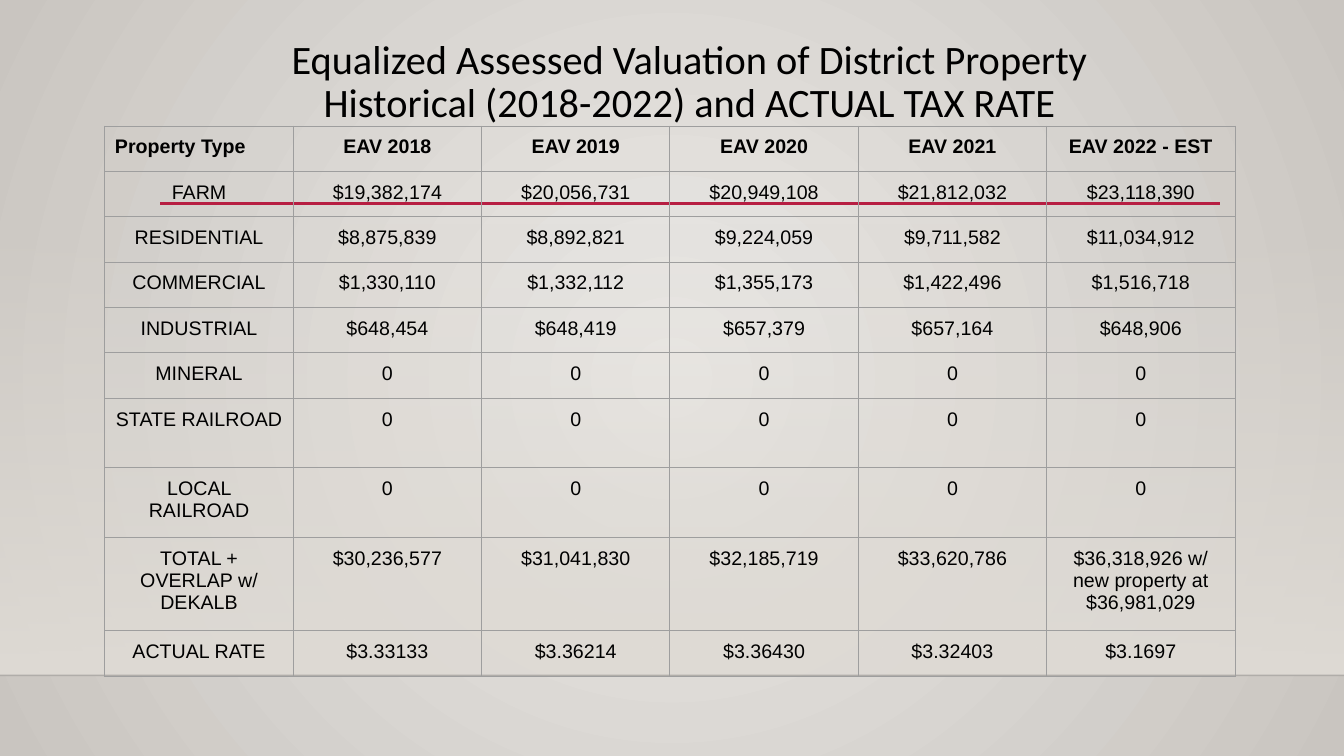
from dataclasses import dataclass

from lxml import etree
from pptx import Presentation
from pptx.dml.color import RGBColor
from pptx.enum import shapes, text
from pptx.oxml import ns
from pptx.util import Inches, Pt


@dataclass(frozen=True)
class Theme:
    ink: str = "000000"
    center: str = "EBE9E6"
    edge: str = "C9C5C0"
    floor: str = "DFDBD5"
    floor_line: str = "000001"
    accent: str = "B71E42"
    grid: str = "9E9E9E"
    title_font: str = "Calibri"
    table_font: str = "Arial"
    title_size: float = 28.8
    table_size: float = 14


theme = Theme()


def add_xml(parent, xml):
    """Append a DrawingML fragment to parent."""
    start = xml.replace(" ", f' {ns.nsdecls("a")} ', 1)
    parent.append(etree.fromstring(start))


def add_rule(s, x1, x2, y, color, width, alpha=100):
    """Draw a horizontal line, alpha being its opacity in percent."""
    rule = s.shapes.add_connector(
        shapes.MSO_CONNECTOR.STRAIGHT, Inches(x1), Inches(y), Inches(x2), Inches(y))
    rule.line.color.rgb = RGBColor.from_string(color)
    rule.line.width = Pt(width)
    if alpha < 100:
        add_xml(rule.line._ln.find(".//" + ns.qn("a:srgbClr")),
                f'<a:alpha val="{alpha * 1000}"/>')
    add_xml(rule._element.spPr, "<a:effectLst />")


prs = Presentation()
prs.slide_width, prs.slide_height = Inches(13.33), Inches(7.5)
s = prs.slides.add_slide(prs.slide_layouts[5])

# Background: light centre fading outwards
fill = s.background.fill
fill.gradient()
for stop, color in zip(fill.gradient_stops, (theme.center, theme.edge)):
    stop.color.rgb = RGBColor.from_string(color)
grad = s.background._cSld.find(".//" + ns.qn("a:gradFill"))
grad.remove(grad.find(ns.qn("a:lin")))
add_xml(grad, '<a:path path="circle">'
              '<a:fillToRect l="50000" t="50000" r="50000" b="50000"/></a:path>')

# Wall that fades in towards the floor line
wall = s.shapes.add_shape(
    shapes.MSO_SHAPE.RECTANGLE, 0, Inches(2.21), Inches(13.33), Inches(4.49))
wall.shadow.inherit = False
wall.line.fill.background()
wall.fill.gradient()
wall.fill.gradient_angle = 270
for stop in wall.fill.gradient_stops:
    stop.color.rgb = RGBColor.from_string(theme.floor)
clear = wall._element.spPr.find(".//" + ns.qn("a:srgbClr"))
add_xml(clear, '<a:alpha val="0"/>')

add_rule(s, 0, 13.33, 6.7, theme.floor_line, 1, alpha=20)
add_rule(s, 1.59, 12.1, 2.02, theme.accent, 2.5)

# Title, in front of the wall
title = s.shapes.title
s.shapes._spTree.append(title._element)
title.left, title.top = Inches(1.59), Inches(0.34)
title.width, title.height = Inches(10.5), Inches(0.91)
tf = title.text_frame
tf.text = ("Equalized Assessed Valuation of District Property\n"
           "Historical (2018-2022) and ACTUAL TAX RATE")
tf.auto_size = text.MSO_AUTO_SIZE.NONE
tf.word_wrap = True
tf.vertical_anchor = text.MSO_ANCHOR.TOP
for p in tf.paragraphs:
    p.alignment = text.PP_ALIGN.CENTER
    p.line_spacing = 0.9
    p.space_before = Pt(0)
    p.font.name = theme.title_font
    p.font.size = Pt(theme.title_size)
    p.font.color.rgb = RGBColor.from_string(theme.ink)

# Valuation table
none = ["0"] * 5
rows = [
    ["Property Type", "EAV 2018", "EAV 2019", "EAV 2020", "EAV 2021", "EAV 2022 - EST"],
    ["FARM", "$19,382,174", "$20,056,731", "$20,949,108", "$21,812,032", "$23,118,390"],
    ["RESIDENTIAL", "$8,875,839", "$8,892,821", "$9,224,059", "$9,711,582", "$11,034,912"],
    ["COMMERCIAL", "$1,330,110", "$1,332,112", "$1,355,173", "$1,422,496", "$1,516,718"],
    ["INDUSTRIAL", "$648,454", "$648,419", "$657,379", "$657,164", "$648,906"],
    ["MINERAL", *none],
    ["STATE RAILROAD", *none],
    ["LOCAL RAILROAD", *none],
    ["TOTAL + OVERLAP w/ DEKALB", "$30,236,577", "$31,041,830", "$32,185,719",
     "$33,620,786", "$36,318,926 w/ new property at\n$36,981,029"],
    ["ACTUAL RATE", "$3.33133", "$3.36214", "$3.36430", "$3.32403", "$3.1697"],
]
tall_rows = {6: 0.69, 7: 0.69, 8: 0.93}
table = s.shapes.add_table(
    len(rows), len(rows[0]), Inches(1.04), Inches(1.25), Inches(11.21), Inches(5.43)).table
table.first_row = table.horz_banding = False

for i, values in enumerate(rows):
    table.rows[i].height = Inches(tall_rows.get(i, 0.45))
    for j, value in enumerate(values):
        cell = table.cell(i, j)
        cell.text = value
        cell.margin_left = cell.margin_right = Inches(0.1)
        cell.margin_top = cell.margin_bottom = Inches(0.1)
        for p in cell.text_frame.paragraphs:
            is_corner = i == j == 0
            p.alignment = text.PP_ALIGN.LEFT if is_corner else text.PP_ALIGN.CENTER
            p.font.name = theme.table_font
            p.font.size = Pt(theme.table_size)
            p.font.bold = i == 0
            p.font.color.rgb = RGBColor.from_string(theme.ink)
        tcPr = cell._tc.get_or_add_tcPr()
        for side in "LRTB":
            add_xml(tcPr, f'<a:ln{side} w="{Pt(0.75)}"><a:solidFill>'
                          f'<a:srgbClr val="{theme.grid}"/></a:solidFill></a:ln{side}>')
        cell.fill.background()

prs.save("out.pptx")
